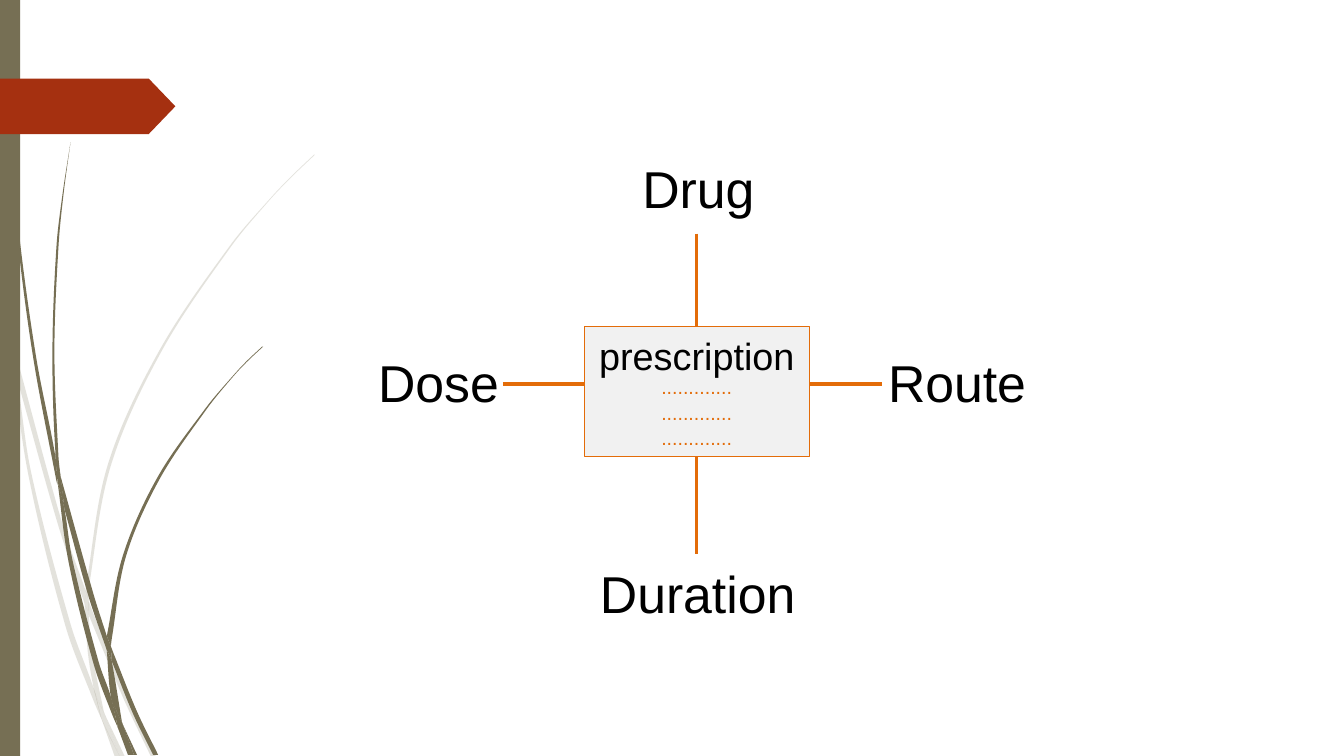
import pptx
import pptx.util
import pptx.dml.color
import pptx.enum.shapes
import pptx.enum.text
import pptx.oxml.ns
import lxml.etree
import math

Cm = pptx.util.Cm
Pt = pptx.util.Pt
RGBColor = pptx.dml.color.RGBColor
SHAPE = pptx.enum.shapes.MSO_SHAPE
ALIGN = pptx.enum.text.PP_ALIGN
qn = pptx.oxml.ns.qn

OLIVE = RGBColor(0x76, 0x6F, 0x54)
RUST = RGBColor(0xA5, 0x30, 0x10)
ORANGE = RGBColor(0xE3, 0x6C, 0x09)
GREY = RGBColor(0xF1, 0xF1, 0xF1)
BLACK = RGBColor(0, 0, 0)
FONT = "Arial"
HIGH = 19.05
GRID = 0.0254  # cm for one step of the grass grid

# Each piece of grass is two smooth edges, given by their knots
PALE = [
    ([(11, 350), (9, 322), (0, 282)], [(0, 299), (10, 344)]),
    ([(14, 345), (62, 520), (85, 586)], [(84, 599), (58, 522), (17, 376)]),
    ([(88, 596), (92, 607), (127, 692), (155, 751)],
     [(150, 751), (123, 694), (88, 610)]),
    ([(105, 711), (124, 751)], [(119, 751)]),
    ([(11, 350), (17, 376), (31, 469), (70, 619), (93, 683), (101, 714)],
     [(101, 714), (92, 693), (65, 621), (28, 470), (11, 350)]),
    ([(84, 599), (87, 646), (93, 683), (96, 692), (105, 711)],
     [(103, 706), (91, 646), (88, 610), (88, 608)]),
    ([(88, 596), (88, 584), (110, 462), (160, 349), (229, 245), (268, 198),
      (290, 175), (312, 154)],
     [(312, 153), (289, 175), (268, 197), (228, 244), (158, 348), (107, 461),
      (85, 584), (85, 586)]),
    ([(101, 714), (114, 751)], [(119, 751)]),
    ([(88, 610), (88, 596), (85, 586)], [(84, 599), (88, 608)]),
    ([(93, 683), (99, 707), (101, 714), (119, 751)],
     [(105, 711), (96, 692)]),
]
DARK = [
    ([(4, 0), (5, 48), (8, 109), (19, 232), (36, 355), (55, 453), (57, 481)],
     [(57, 481), (56, 477), (33, 355), (17, 233), (7, 110), (4, 48), (3, 0)]),
    ([(60, 472), (93, 590), (106, 631)],
     [(106, 645), (88, 592), (64, 505)]),
    ([(110, 641), (113, 649), (136, 706), (157, 749)],
     [(152, 749), (132, 708), (111, 656)]),
    ([(57, 477), (64, 505), (72, 556), (98, 657), (110, 691), (117, 722)],
     [(117, 722), (111, 708), (93, 659), (68, 557), (57, 477)]),
    ([(60, 472), (58, 453), (54, 349), (58, 245), (63, 193), (70, 141)],
     [(70, 141), (62, 193), (56, 245), (52, 349), (55, 449), (60, 472)]),
    ([(122, 719), (133, 749)], [(136, 749)]),
    ([(55, 449), (60, 472), (64, 505)], [(57, 477), (55, 453)]),
    ([(110, 641), (111, 633), (125, 552), (158, 476), (205, 406), (231, 374),
      (245, 359), (261, 344)],
     [(260, 344), (245, 358), (231, 373), (204, 405), (156, 474), (122, 551),
      (106, 631)]),
    ([(117, 722), (127, 749)], [(131, 749)]),
    ([(106, 645), (110, 691), (116, 706), (122, 719)],
     [(121, 716), (111, 656), (109, 651)]),
    ([(106, 645), (109, 651), (111, 656)], [(110, 641), (106, 631)]),
    ([(110, 691), (116, 717), (117, 722), (130, 749)],
     [(133, 749), (122, 719), (116, 706)]),
]


def bend(knots):
    """Return two handles and an end point for each span of an edge."""
    path = []
    for i in range(len(knots) - 1):
        p, q = knots[i], knots[i + 1]
        prev, after = knots[max(i - 1, 0)], knots[min(i + 2, len(knots) - 1)]
        span = math.dist(p, q)
        back = span / (math.dist(prev, p) + span) / 3
        ahead = span / (span + math.dist(q, after)) / 3
        path += [tuple(p[a] + (q[a] - prev[a]) * back for a in (0, 1)),
                 tuple(q[a] - (after[a] - p[a]) * ahead for a in (0, 1)), q]
    return path


def paint(shape, fill):
    shape.shadow.inherit = False
    shape.fill.solid()
    shape.fill.fore_color.rgb = fill
    shape.line.fill.background()


def blade(slide, left, top, near, far):
    """Draw one piece of grass, turning each three points into a curve."""
    path = [near[0]] + bend(near) + [near[-1], far[0], far[0]] + bend(far)
    spots = [(Cm(left + x * GRID), Cm(top + y * GRID)) for x, y in path]
    pen = slide.shapes.build_freeform(*spots[0])
    pen.add_line_segments(spots[1:], close=True)
    shape = pen.convert_to_shape()
    paint(shape, OLIVE)
    lines = list(shape._element.iter(qn("a:lnTo")))
    for i in range(0, len(lines), 3):
        curve = lxml.etree.Element(qn("a:cubicBezTo"))
        lines[i].addprevious(curve)
        for line in lines[i:i + 3]:
            curve.append(line[0])
            line.getparent().remove(line)
    return shape


def border(slide, x, y, h):
    """Draw the grass, the side bar and the tag along the left edge."""
    for near, far in PALE:
        shape = blade(slide, x, y, near, far)
        tint = next(shape._element.spPr.iter(qn("a:srgbClr")))
        lxml.etree.SubElement(tint, qn("a:alpha")).set("val", "20000")
    for near, far in DARK:
        blade(slide, x, y, near, far)
    bar = slide.shapes.add_shape(SHAPE.RECTANGLE, Cm(x), Cm(y), Cm(0.51), Cm(h))
    paint(bar, OLIVE)
    tag = slide.shapes.add_shape(
        SHAPE.PENTAGON, Cm(x), Cm(y + 1.98), Cm(4.42), Cm(1.4))
    tag.adjustments[0] = 0.48
    paint(tag, RUST)


def style(para, size, color):
    for run in para.runs:
        run.font.name = FONT
        run.font.size = Pt(size)
        run.font.color.rgb = color


def inset(frame, top):
    frame.word_wrap = True
    frame.vertical_anchor = pptx.enum.text.MSO_ANCHOR.TOP
    frame.margin_left = frame.margin_right = frame.margin_bottom = 0
    frame.margin_top = Cm(top)


def label(slide, text, x, y, w):
    box = slide.shapes.add_textbox(Cm(x), Cm(y), Cm(w), Cm(1.68))
    frame = box.text_frame
    inset(frame, 0.05)
    frame.margin_left = Cm(0.03)
    frame.text = text
    style(frame.paragraphs[0], 37, BLACK)


def spoke(slide, x1, y1, x2, y2, width):
    line = slide.shapes.add_connector(
        pptx.enum.shapes.MSO_CONNECTOR.STRAIGHT, Cm(x1), Cm(y1), Cm(x2), Cm(y2))
    line.line.color.rgb = ORANGE
    line.line.width = Pt(width)
    lxml.etree.SubElement(line._element.spPr, qn("a:effectLst"))


def card(slide, x, y, w, h):
    box = slide.shapes.add_shape(SHAPE.RECTANGLE, Cm(x), Cm(y), Cm(w), Cm(h))
    paint(box, GREY)
    box.line.color.rgb = ORANGE
    box.line.width = Pt(0.75)
    frame = box.text_frame
    inset(frame, 0.15)
    frame.text = "\n".join(["prescription"] + ["............."] * 3)
    for i, para in enumerate(frame.paragraphs):
        para.alignment = ALIGN.CENTER
        para.line_spacing = (1, 0.9, 1.08, 1.08)[i]
        style(para, 14 if i else 27, ORANGE if i else BLACK)


def diagram(slide, x, y, w, h):
    """Draw the card in the given box, with its four spokes and labels."""
    mid, row = x + w / 2, y + 1.45
    right, base = x + w, y + h
    label(slide, "Drug", mid - 1.4, y - 4.32, 2.95)
    label(slide, "Dose", x - 5.23, y + 0.56, 3.18)
    label(slide, "Duration", mid - 2.47, base + 2.59, 5.08)
    label(slide, "Route", right + 1.96, y + 0.56, 3.61)
    spoke(slide, mid, y - 2.34, mid, y, 2.25)
    spoke(slide, mid, base, mid, base + 2.44, 2.25)
    spoke(slide, right, row, right + 1.83, row, 3)
    spoke(slide, x - 2.06, row, x, row, 3)
    card(slide, x, y, w, h)


def main():
    deck = pptx.Presentation()
    deck.slide_width, deck.slide_height = Cm(33.87), Cm(HIGH)
    slide = deck.slides.add_slide(deck.slide_layouts[6])
    border(slide, 0, 0, HIGH)
    diagram(slide, 14.73, 8.23, 5.66, 3.28)
    deck.save("out.pptx")


if __name__ == "__main__":
    main()
